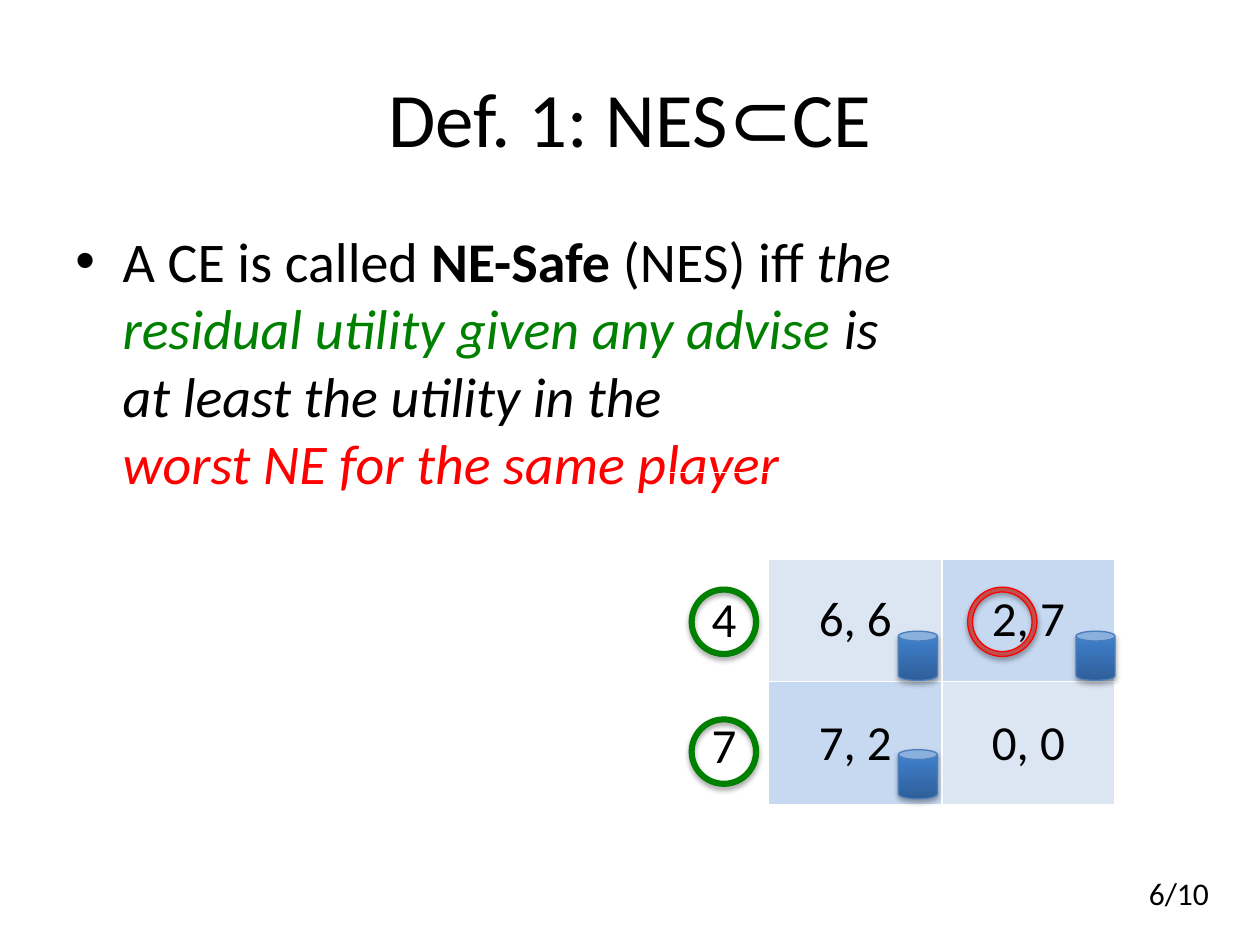
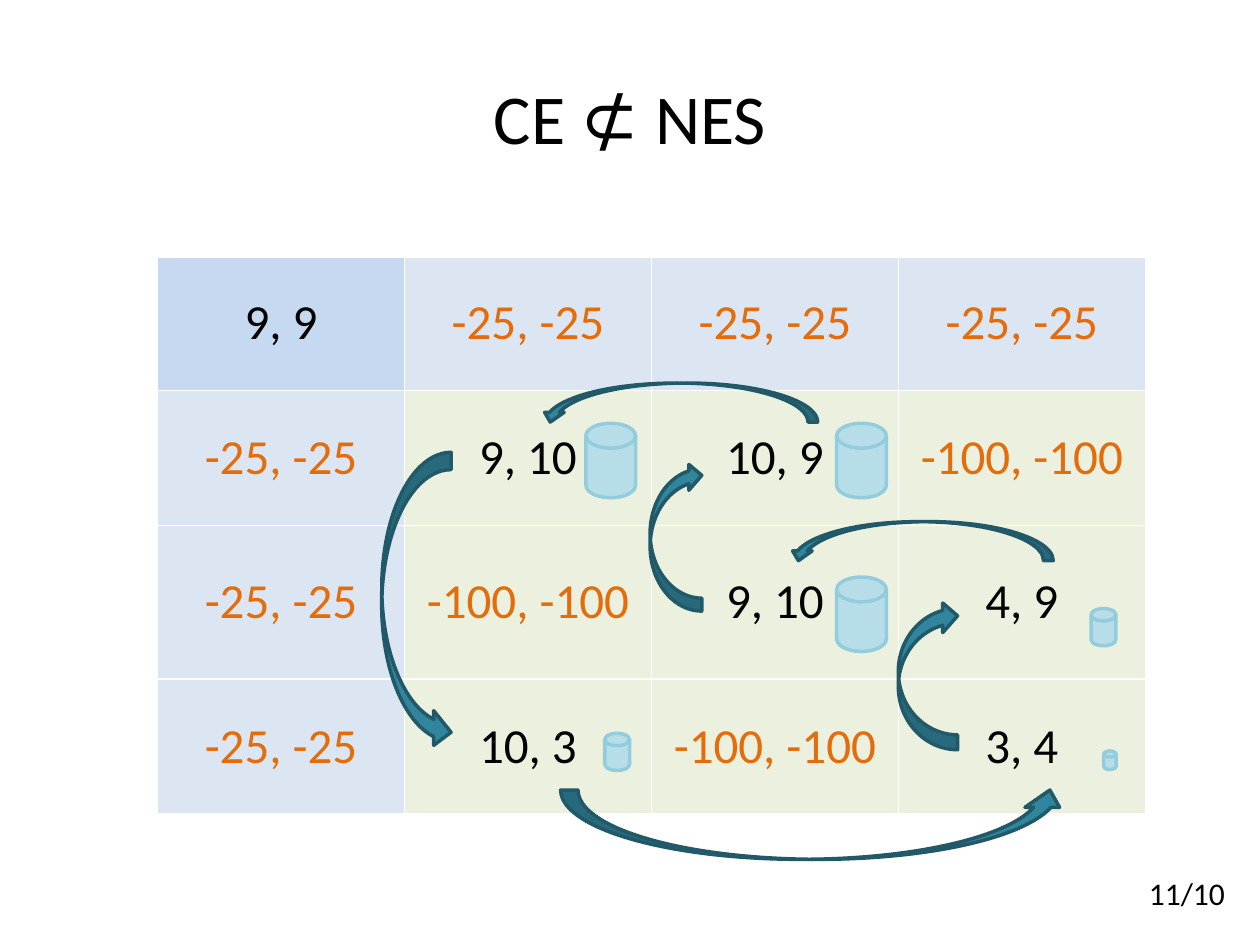
from collections.abc import Callable
from copy import deepcopy
from dataclasses import dataclass

from lxml import etree
from pptx import Presentation
from pptx.dml.color import RGBColor
from pptx.enum.shapes import MSO_SHAPE
from pptx.enum.text import MSO_ANCHOR, PP_ALIGN
from pptx.oxml.ns import qn
from pptx.util import Emu, Inches, Pt

CAN = MSO_SHAPE.CAN
DISK = MSO_SHAPE.FLOWCHART_MAGNETIC_DISK
DONUT = MSO_SHAPE.DONUT
RIGHT_ARROW = MSO_SHAPE.CURVED_RIGHT_ARROW
UP_ARROW = MSO_SHAPE.CURVED_UP_ARROW
CENTER, LEFT = PP_ALIGN.CENTER, PP_ALIGN.LEFT
MIDDLE, TOP = MSO_ANCHOR.MIDDLE, MSO_ANCHOR.TOP

FONT = "Calibri"
COLORS = {
    "black": "000000", "white": "FFFFFF", "green": "008000", "red": "FF0000",
    "brick": "C0504D", "orange": "E46C0A", "pale_blue": "DCE6F2",
    "mid_blue": "C6D9F1", "pale_green": "EBF1DE", "teal": "31859C",
    "dark_teal": "215968", "aqua": "B7DEE8", "aqua_line": "93CDDD",
    "can_line": "4B7EBC", "can_dark": "2F5F99", "can_mid": "3D7CC7",
    "can_light": "3A7CCB",
}
CAN_STOPS = ((0, "can_dark"), (0.8, "can_mid"), (1, "can_light"))
COLUMNS, ROWS = 100, 75
SLIDE_WIDTH, SLIDE_HEIGHT = Inches(10), Inches(7.5)


@dataclass(frozen=True)
class Frame:
    """A place on the grid of COLUMNS by ROWS that covers the slide."""
    left: float
    top: float
    width: float
    height: float

    def emu(self) -> tuple[Emu, Emu, Emu, Emu]:
        return (across(self.left), down(self.top),
                across(self.width), down(self.height))


@dataclass(frozen=True)
class Span:
    text: str
    color: str = "black"
    bold: bool = False
    italic: bool = False


@dataclass(frozen=True)
class Look:
    fill: str
    line: str
    weight: float
    shadow: bool = False


@dataclass(frozen=True)
class Arrow:
    kind: int
    frame: Frame
    flips: str = ""


@dataclass(frozen=True)
class Game:
    """A payoff table under an empty header row and beside an empty column."""
    left: float
    top: float
    widths: list[float]
    heights: list[float]
    payoffs: list[list[str]]
    cell_fill: Callable[[int, int], str]


TITLE = Frame(5, 3, 90, 12.5)
CAN_LOOK = Look("can", "can_line", 0.75, True)
GREEN_RING = Look("green", "green", 0.75, True)
RED_RING = Look("brick", "red", 0.75, True)
ARROW_LOOK = Look("teal", "dark_teal", 2)
DISK_LOOK = Look("aqua", "aqua_line", 2)


def across(columns: float) -> Emu:
    return Emu(round(SLIDE_WIDTH * columns / COLUMNS))


def down(rows: float) -> Emu:
    return Emu(round(SLIDE_HEIGHT * rows / ROWS))


def rgb(name: str) -> RGBColor:
    return RGBColor.from_string(COLORS[name])


def write(frame, text: str | list[Span], *, size: float, color: str = "black",
          align=LEFT, anchor=TOP, wrap: bool = True):
    """Fill a text frame with one paragraph; a newline span is a line break."""
    frame.word_wrap = wrap
    frame.vertical_anchor = anchor
    para = frame.paragraphs[0]
    para.alignment = align
    for span in [Span(text, color)] if isinstance(text, str) else text:
        if span.text == "\n":
            para.add_line_break()
            continue
        run = para.add_run()
        run.text = span.text
        font = run.font
        font.name, font.size = FONT, Pt(size)
        font.bold, font.italic = span.bold, span.italic
        font.color.rgb = rgb(span.color)
    return para


def add_page(deck, title: str, size: float, number: str):
    page = deck.slides.add_slide(deck.slide_layouts[5])
    box = page.shapes.title
    box.left, box.top, box.width, box.height = TITLE.emu()
    write(box.text_frame, title, size=size, align=CENTER, anchor=MIDDLE)
    add_text(page, Frame(90.2, 68.9, 8, 4), number, size=18, wrap=False)
    return page


def add_text(page, frame: Frame, text: str | list[Span], **text_format):
    box = page.shapes.add_textbox(*frame.emu())
    return write(box.text_frame, text, **text_format)


def add_bullet(para, indent: float) -> None:
    properties = para._p.get_or_add_pPr()
    properties.set("marL", str(across(indent)))
    properties.set("indent", str(-across(indent)))
    etree.SubElement(properties, qn("a:buFont"), typeface="Arial")
    etree.SubElement(properties, qn("a:buChar"), char="•")


def fill_can(shape) -> None:
    shape.fill.gradient()
    shape.fill.gradient_angle = 90
    stops = shape._element.spPr.find(".//" + qn("a:gsLst"))
    stops.append(deepcopy(stops[-1]))
    for stop, (position, color) in zip(shape.fill.gradient_stops, CAN_STOPS):
        stop.position = position
        stop.color.rgb = rgb(color)


def add_shadow(shape) -> None:
    effects = shape._element.spPr.find(qn("a:effectLst"))
    shadow = etree.SubElement(
        effects, qn("a:outerShdw"), blurRad=str(Pt(3.1)), dist=str(Pt(1.8)),
        dir="5400000", rotWithShape="0")
    color = etree.SubElement(shadow, qn("a:srgbClr"), val=COLORS["black"])
    etree.SubElement(color, qn("a:alpha"), val="35000")


def add_figure(page, kind: int, frame: Frame, look: Look):
    shape = page.shapes.add_shape(kind, *frame.emu())
    shape.shadow.inherit = False
    if look.fill == "can":
        fill_can(shape)
    else:
        shape.fill.solid()
        shape.fill.fore_color.rgb = rgb(look.fill)
    shape.line.color.rgb = rgb(look.line)
    shape.line.width = Pt(look.weight)
    if look.shadow:
        add_shadow(shape)
    return shape


def add_ring(page, left: float, top: float, look: Look) -> None:
    ring = add_figure(page, DONUT, Frame(left, top, 5.5, 5.5), look)
    ring.adjustments[0] = 0.07


def add_arrow(page, arrow: Arrow) -> None:
    shape = add_figure(page, arrow.kind, arrow.frame, ARROW_LOOK)
    for axis in arrow.flips:
        shape._element.spPr.xfrm.set("flip" + axis, "1")


def add_borders(cell, bottom: float) -> None:
    properties = cell._tc.get_or_add_tcPr()
    for side, width in (("L", 1), ("R", 1), ("T", 1), ("B", bottom)):
        line = etree.SubElement(properties, qn("a:ln" + side), w=str(Pt(width)))
        fill = etree.SubElement(line, qn("a:solidFill"))
        etree.SubElement(fill, qn("a:srgbClr"), val=COLORS["white"])


def add_game(page, game: Game) -> None:
    frame = Frame(game.left, game.top, sum(game.widths), sum(game.heights))
    table = page.shapes.add_table(
        len(game.heights), len(game.widths), *frame.emu()).table
    table.first_row = table.horz_banding = False
    for column, width in zip(table.columns, game.widths):
        column.width = across(width)
    for row, height in zip(table.rows, game.heights):
        row.height = down(height)
    for r, row in enumerate(table.rows):
        for c, cell in enumerate(row.cells):
            add_borders(cell, bottom=1 if r else 3)
            if not (r and c):
                cell.fill.background()
                continue
            cell.fill.solid()
            cell.fill.fore_color.rgb = rgb(game.cell_fill(r, c))
            cell.vertical_anchor = MIDDLE
            payoff = game.payoffs[r - 1][c - 1]
            color = "orange" if payoff.startswith("-") else "black"
            write(cell.text_frame, payoff, size=28, color=color,
                  align=CENTER, anchor=MIDDLE)


def checkered(row: int, column: int) -> str:
    return "mid_blue" if (row + column) % 2 else "pale_blue"


def framed(row: int, column: int) -> str:
    """Blue for the first payoff row and column, green for the inner game."""
    if row == column == 1:
        return "mid_blue"
    return "pale_blue" if 1 in (row, column) else "pale_green"


def build_definition(deck) -> None:
    page = add_page(deck, "Def. 1: NES⊂CE", 44, "6/10")
    para = add_text(page, Frame(5, 17.5, 68.6, 53.9), [
        Span("A CE is called "),
        Span("NE-Safe", bold=True),
        Span(" (NES) iff "),
        Span("the ", italic=True),
        Span("residual utility given any advise", "green", italic=True),
        Span(" is at least the utility in the ", italic=True),
        Span("\n"),
        Span("worst NE for the same player", "red", italic=True),
    ], size=32)
    para.space_before = Pt(6.4)
    add_bullet(para, 3.75)

    add_game(page, Game(53.1, 37.5, [7.9] + [13.75] * 2, [6.8] + [9.8] * 2,
                        [["6, 6", "2, 7"], ["7, 2", "0, 0"]], checkered))
    for left, top in ((71.3, 50.1), (71.3, 59.5), (85.4, 50.1)):
        add_figure(page, CAN, Frame(left, top, 3.1, 3.9), CAN_LOOK)
    for utility, top in (("4", 46.2), ("7", 56.2)):
        add_text(page, Frame(55.5, top, 5.5, 5.7), utility, size=28)
    add_ring(page, 76.8, 46.6, RED_RING)
    for top in (46.6, 56.9):
        add_ring(page, 54.7, top, GREEN_RING)


def build_counterexample(deck) -> None:
    page = add_page(deck, "CE ⊄ NES", 40, "11/10")
    edge, loss = "-25, -25", "-100, -100"
    add_game(page, Game(
        3.5, 12.4, [9] + [19.6] * 4, [7.9, 10.7, 10.7, 12.2, 10.7],
        [["9, 9", edge, edge, edge],
         [edge, "9, 10", "10, 9", loss],
         [edge, loss, "9, 10", "4, 9"],
         [edge, "10, 3", loss, "3, 4"]], framed))
    for arrow in (
        Arrow(RIGHT_ARROW, Frame(71.3, 47.7, 4.7, 11.8), "V"),
        Arrow(RIGHT_ARROW, Frame(51.6, 36.7, 4.1, 11.8), "V"),
        Arrow(RIGHT_ARROW, Frame(30.3, 35.9, 5.5, 23.6)),
        Arrow(UP_ARROW, Frame(44.5, 62.7, 40.2, 5.5)),
        Arrow(UP_ARROW, Frame(62.6, 41.4, 21, 3.1), "HV"),
        Arrow(UP_ARROW, Frame(42.9, 30.4, 22, 3.1), "HV"),
    ):
        add_arrow(page, arrow)
    full_width, full_height = 3.94, 5.9
    for left, top, scale in (
        (46.5, 33.6, 1), (66.4, 33.6, 1), (66.4, 45.8, 1),
        (86.6, 48.3, 0.5), (87.6, 59.6, 0.25), (48, 58.2, 0.5),
    ):
        frame = Frame(left, top, full_width * scale, full_height * scale)
        add_figure(page, DISK, frame, DISK_LOOK)


def main() -> None:
    deck = Presentation()
    deck.slide_width, deck.slide_height = SLIDE_WIDTH, SLIDE_HEIGHT
    build_definition(deck)
    build_counterexample(deck)
    deck.save("out.pptx")


if __name__ == "__main__":
    main()
